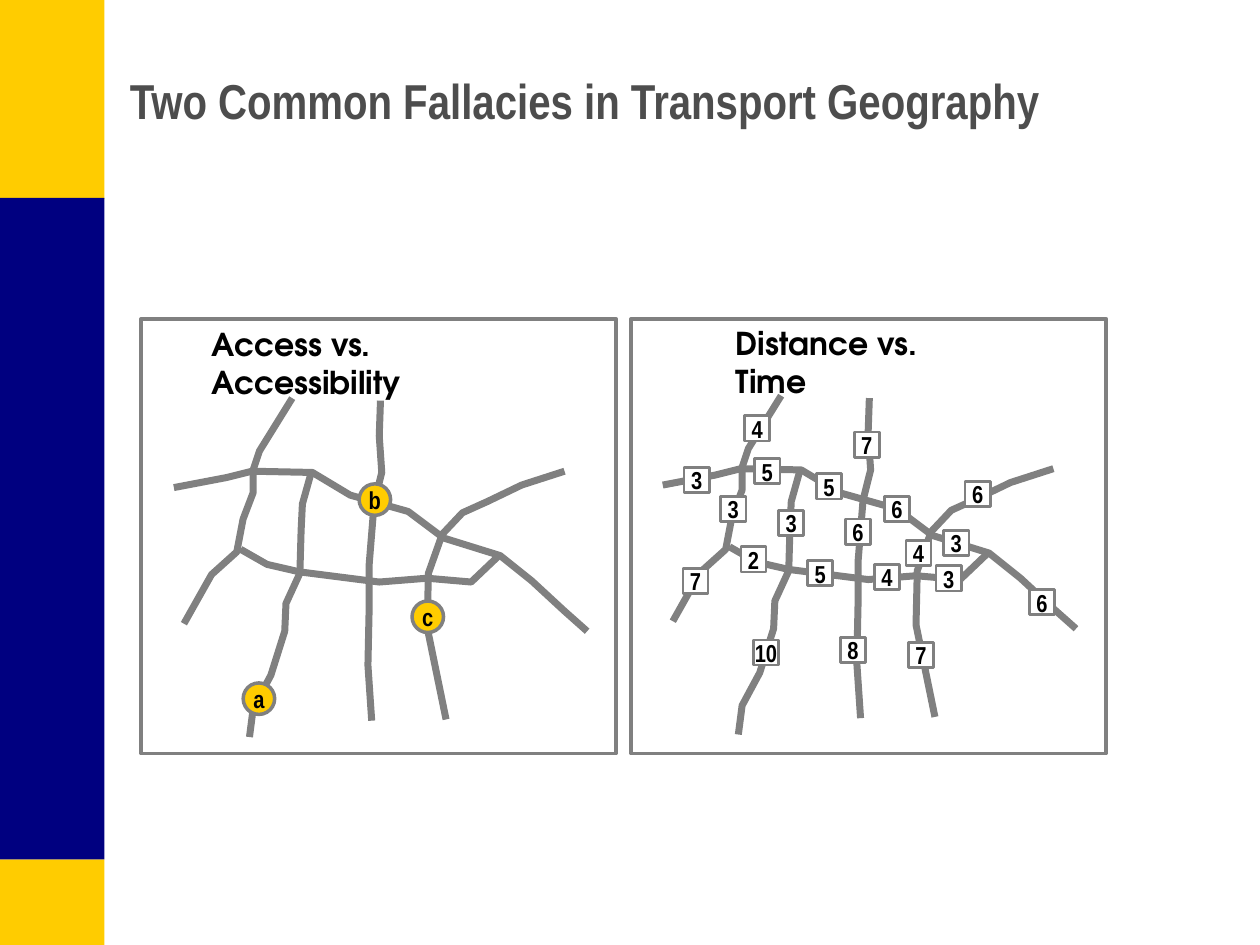
from dataclasses import dataclass

from pptx import Presentation, util as u
from pptx.dml import color
from pptx.enum import shapes, text

GOLD, NAVY, GREY, WHITE = "FFCC00", "000080", "808080", "FFFFFF"
BLACK, DARK = "000000", "4D4D4D"
NARROW, ROUND = "Arial Narrow", "TeX Gyre Adventor"
RECT, OVAL = shapes.MSO_SHAPE.RECTANGLE, shapes.MSO_SHAPE.OVAL


@dataclass
class Box:
    x: float
    y: float
    w: float
    h: float

    def place(self) -> list:
        return [u.Inches(v) for v in (self.x, self.y, self.w, self.h)]


@dataclass
class Mark:
    label: str
    x: float
    y: float


@dataclass
class Style:
    kind: int
    size: float
    fill: str
    line: float


NODE = Style(OVAL, 0.25, GOLD, 2)
TIME = Style(RECT, 0.2, WHITE, 1.5)

BANDS = [
    (Box(0, 6.82, 0.83, 0.68), GOLD),
    (Box(0, 0, 0.83, 1.58), GOLD),
    (Box(0, 1.57, 0.83, 5.25), NAVY),
]
PANELS = [Box(x, 2.53, 3.77, 3.45) for x in (1.12, 5.01)]
HEADS = [
    ("Access vs. Accessibility", Box(1.68, 2.58, 2.66, 0.3)),
    ("Distance vs. Time", Box(5.84, 2.57, 2.01, 0.3)),
]
ROADS = [
    [(1.38, 3.87), (1.8, 3.79), (2, 3.74), (2.48, 3.75), (2.78, 3.93), (3.24, 4.06),
     (3.52, 4.27), (3.97, 4.41), (4.22, 4.61), (4.48, 4.85), (4.66, 5.01)],
    [(1.46, 4.95), (1.68, 4.56), (1.88, 4.38), (1.93, 4.12), (2.01, 3.91),
     (2.01, 3.73), (2.06, 3.58), (2.32, 3.16)],
    [(2.47, 3.75), (2.4, 4), (2.39, 4.21), (2.38, 4.55), (2.27, 4.79),
     (2.26, 5.01), (2.15, 5.36), (2.01, 5.62), (1.98, 5.85)],
    [(1.91, 4.36), (2.12, 4.48), (2.38, 4.54), (3.01, 4.62), (3.39, 4.59),
     (3.74, 4.62), (3.95, 4.42)],
    [(2.95, 5.72), (2.92, 5.28), (2.93, 4.82), (2.93, 4.48), (2.97, 3.99),
     (3.03, 3.75), (3.01, 3.46), (3.02, 3.18)],
    [(4.48, 3.74), (4.14, 3.85), (3.87, 3.98), (3.67, 4.07), (3.51, 4.24),
     (3.4, 4.55), (3.39, 4.98), (3.54, 5.71)],
]
NODES = [Mark("a", 1.93, 5.42), Mark("b", 2.85, 3.84), Mark("c", 3.27, 4.77)]
TIMES = [
    Mark("10", 5.98, 5.08), Mark("3", 6.18, 4.05), Mark("3", 5.43, 3.71),
    Mark("5", 5.99, 3.64), Mark("5", 6.48, 3.76), Mark("4", 5.91, 3.3),
    Mark("3", 5.72, 3.94), Mark("7", 5.42, 4.51), Mark("2", 5.88, 4.34),
    Mark("5", 6.41, 4.45), Mark("8", 6.67, 5.06), Mark("6", 6.71, 4.12),
    Mark("7", 6.78, 3.43), Mark("6", 7.02, 3.94), Mark("4", 6.94, 4.48),
    Mark("7", 7.21, 5.1), Mark("6", 8.17, 4.68), Mark("3", 7.43, 4.49),
    Mark("3", 7.49, 4.21), Mark("4", 7.19, 4.29), Mark("6", 7.66, 3.82),
]


def paint(shape, fill: str = "", line: float = 0) -> None:
    shape.shadow.inherit = False
    if fill:
        shape.fill.solid()
        shape.fill.fore_color.rgb = color.RGBColor.from_string(fill)
    else:
        shape.fill.background()
    if line:
        shape.line.color.rgb = color.RGBColor.from_string(GREY)
        shape.line.width = u.Pt(line)
    else:
        shape.line.fill.background()


def write(frame, words: str, size: float, face: str, ink: str, align) -> None:
    par = frame.paragraphs[0]
    par.alignment = align
    run = par.add_run()
    run.text = words
    run.font.size = u.Pt(size)
    run.font.name = face
    run.font.bold = True
    run.font.color.rgb = color.RGBColor.from_string(ink)


def trim(frame) -> None:
    frame.margin_left = frame.margin_right = 0
    frame.margin_top = frame.margin_bottom = 0


def draw_box(slide, box: Box, fill: str = "", line: float = 0) -> None:
    paint(slide.shapes.add_shape(RECT, *box.place()), fill, line)


def draw_title(slide) -> None:
    title = slide.shapes.title
    title.left, title.top, title.width, title.height = Box(0.93, 0.17, 8.9, 1.25).place()
    frame = title.text_frame
    frame.auto_size = text.MSO_AUTO_SIZE.NONE
    frame.vertical_anchor = text.MSO_ANCHOR.MIDDLE
    write(frame, "Two Common Fallacies in Transport Geography", 28, NARROW, DARK,
          text.PP_ALIGN.LEFT)


def draw_head(slide, words: str, box: Box) -> None:
    frame = slide.shapes.add_textbox(*box.place()).text_frame
    frame.word_wrap = True
    trim(frame)
    write(frame, words, 18, ROUND, BLACK, text.PP_ALIGN.LEFT)


def draw_roads(slide, dx: float, dy: float) -> None:
    for road in ROADS:
        first, *rest = [(u.Inches(x + dx), u.Inches(y + dy)) for x, y in road]
        path = slide.shapes.build_freeform(*first)
        path.add_line_segments(rest, close=False)
        paint(path.convert_to_shape(), line=4)


def draw_marks(slide, marks: list[Mark], style: Style) -> None:
    for mark in marks:
        box = Box(mark.x, mark.y, style.size, style.size)
        shape = slide.shapes.add_shape(style.kind, *box.place())
        paint(shape, style.fill, style.line)
        frame = shape.text_frame
        frame.word_wrap = False
        frame.vertical_anchor = text.MSO_ANCHOR.MIDDLE
        trim(frame)
        write(frame, mark.label, 14, NARROW, BLACK, text.PP_ALIGN.CENTER)


def main() -> None:
    deck = Presentation()
    deck.slide_width, deck.slide_height = u.Inches(10), u.Inches(7.5)
    slide = deck.slides.add_slide(deck.slide_layouts[5])
    for box, fill in BANDS:
        draw_box(slide, box, fill)
    draw_title(slide)
    for box in PANELS:
        draw_box(slide, box, line=2)
    for words, box in HEADS:
        draw_head(slide, words, box)
    draw_roads(slide, 0, 0)
    draw_marks(slide, NODES, NODE)
    draw_roads(slide, 3.88, -0.02)
    draw_marks(slide, TIMES, TIME)
    deck.save("out.pptx")


if __name__ == "__main__":
    main()
